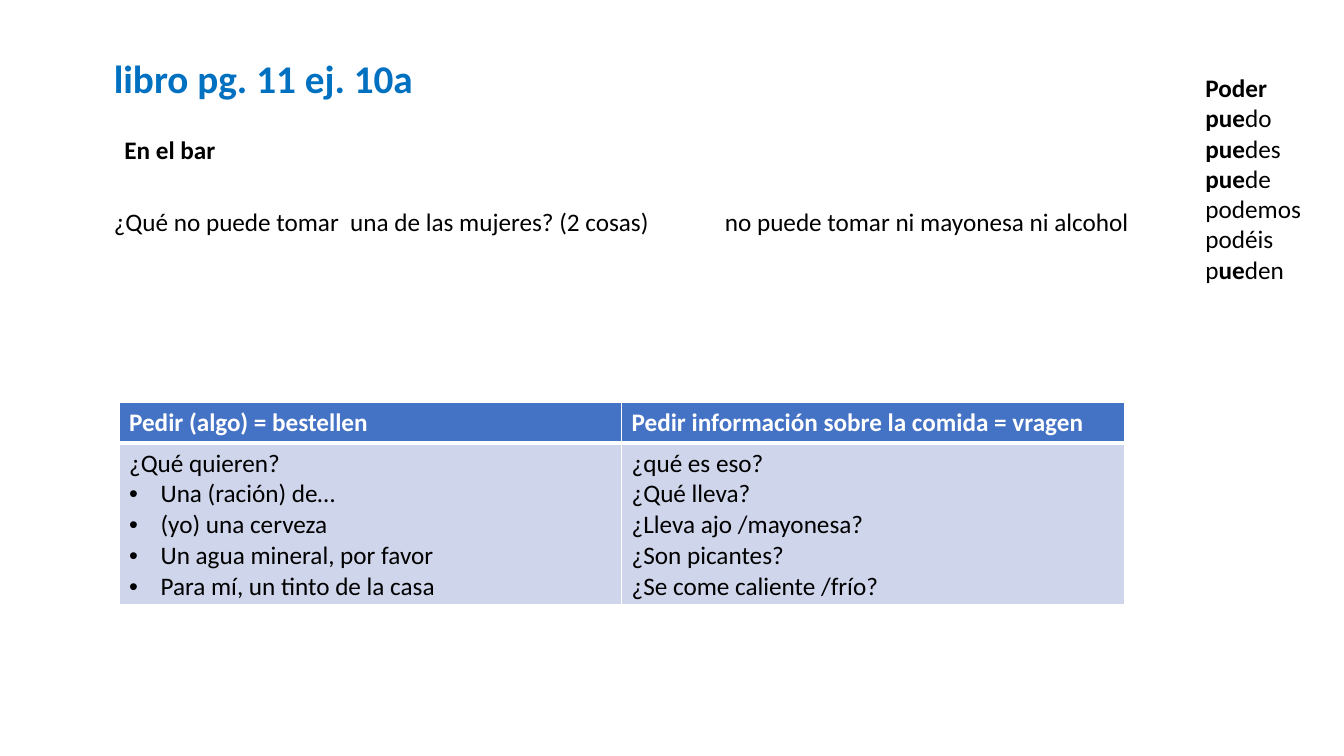
from dataclasses import dataclass

import lxml.etree
import pptx
import pptx.dml.color
import pptx.enum.text
import pptx.oxml.ns
import pptx.util

Pt = pptx.util.Pt
qn = pptx.oxml.ns.qn


@dataclass(frozen=True)
class Theme:
    font: str = "Calibri"
    title_size: int = 28
    text_size: int = 18
    title: str = "0070C0"
    text: str = "000000"
    white: str = "FFFFFF"
    header_fill: str = "4472C4"
    body_fill: str = "CFD5EA"
    thin_border: int = 1
    thick_border: int = 3


THEME = Theme()
BULLET_INDENT = 22.5


def rgb(value):
    return pptx.dml.color.RGBColor.from_string(value)


def write_spans(para, content, size=THEME.text_size, color=THEME.text, bold=False):
    """Fill a paragraph with a string, in which asterisks switch bold on and off."""
    for index, piece in enumerate(content.split("*")):
        if piece:
            span = para.add_run()
            span.text = piece
            span.font.name = THEME.font
            span.font.size = Pt(size)
            span.font.color.rgb = rgb(color)
            span.font.bold = bold or index % 2 == 1


def write_lines(frame, lines, **text_format):
    for index, line in enumerate(lines):
        para = frame.paragraphs[0] if index == 0 else frame.add_paragraph()
        bulleted = line.startswith("• ")
        write_spans(para, line.removeprefix("• "), **text_format)
        if bulleted:
            add_bullet(para)


def add_bullet(para):
    properties = para._p.get_or_add_pPr()
    properties.set("marL", str(Pt(BULLET_INDENT)))
    properties.set("indent", str(-Pt(BULLET_INDENT)))
    font = lxml.etree.SubElement(properties, qn("a:buFont"))
    font.set("typeface", "Arial")
    lxml.etree.SubElement(properties, qn("a:buChar")).set("char", "•")


def add_text(page, lines, left, top, width, height, **text_format):
    box = page.shapes.add_textbox(Pt(left), Pt(top), Pt(width), Pt(height))
    box.text_frame.word_wrap = True
    box.text_frame.auto_size = pptx.enum.text.MSO_AUTO_SIZE.SHAPE_TO_FIT_TEXT
    write_lines(box.text_frame, lines, **text_format)


def set_borders(cell, **widths):
    """Draw white cell borders; widths are given by side: L, R, T, B."""
    properties = cell._tc.get_or_add_tcPr()
    for position, side in enumerate("LRTB"):
        line = lxml.etree.Element(qn("a:ln" + side))
        line.set("w", str(Pt(widths.get(side, THEME.thin_border))))
        fill = lxml.etree.SubElement(line, qn("a:solidFill"))
        lxml.etree.SubElement(fill, qn("a:srgbClr")).set("val", THEME.white)
        properties.insert(position, line)


def fill_cell(cell, lines, fill, borders, **text_format):
    write_lines(cell.text_frame, lines, **text_format)
    cell.fill.solid()
    cell.fill.fore_color.rgb = rgb(fill)
    set_borders(cell, **borders)


def add_heading(page, left, top):
    add_text(page, ["libro pg. 11 ej. 10a"], left, top, 279.5, 41,
             size=THEME.title_size, color=THEME.title, bold=True)
    add_text(page, ["En el bar"], left + 7.6, top + 57, 101.5, 29, bold=True)


def add_question(page, left, top):
    add_text(page, ["¿Qué no puede tomar  una de las mujeres? (2 cosas)"],
             left, top, 425, 29)
    add_text(page, ["no puede tomar ni mayonesa ni alcohol"],
             left + 436.5, top, 397.5, 29)


def add_phrase_table(page, left, top, width):
    columns = {
        "Pedir (algo) = bestellen": [
            "¿Qué quieren?", "• Una (ración) de…", "• (yo) una cerveza",
            "• Un agua mineral, por favor", "• Para mí, un tinto de la casa"],
        "Pedir información sobre la comida = vragen": [
            "¿qué es eso?", "¿Qué lleva?", "¿Lleva ajo /mayonesa?",
            "¿Son picantes?", "¿Se come caliente /frío?"],
    }
    row_heights = (29.2, 115)
    table = page.shapes.add_table(
        2, len(columns), Pt(left), Pt(top), Pt(width), Pt(sum(row_heights))).table
    for row, height in zip(table.rows, row_heights):
        row.height = Pt(height)
    for index, (heading, phrases) in enumerate(columns.items()):
        table.columns[index].width = Pt(width / len(columns))
        fill_cell(table.cell(0, index), [heading], THEME.header_fill,
                  {"B": THEME.thick_border}, color=THEME.white, bold=True)
        fill_cell(table.cell(1, index), phrases, THEME.body_fill,
                  {"T": THEME.thick_border})


def add_conjugation(page, left, top):
    forms = ["*Poder*", "*pue*do", "*pue*des", "*pue*de", "podemos", "podéis", "p*ue*den"]
    add_text(page, forms, left, top, 86.5, 160)


def main():
    deck = pptx.Presentation()
    deck.slide_width, deck.slide_height = Pt(960), Pt(540)
    page = deck.slides.add_slide(deck.slide_layouts[6])
    add_heading(page, 74.2, 35.3)
    add_question(page, 74.2, 144)
    add_phrase_table(page, 85, 287.3, 718)
    add_conjugation(page, 854, 48.2)
    deck.save("out.pptx")


if __name__ == "__main__":
    main()
